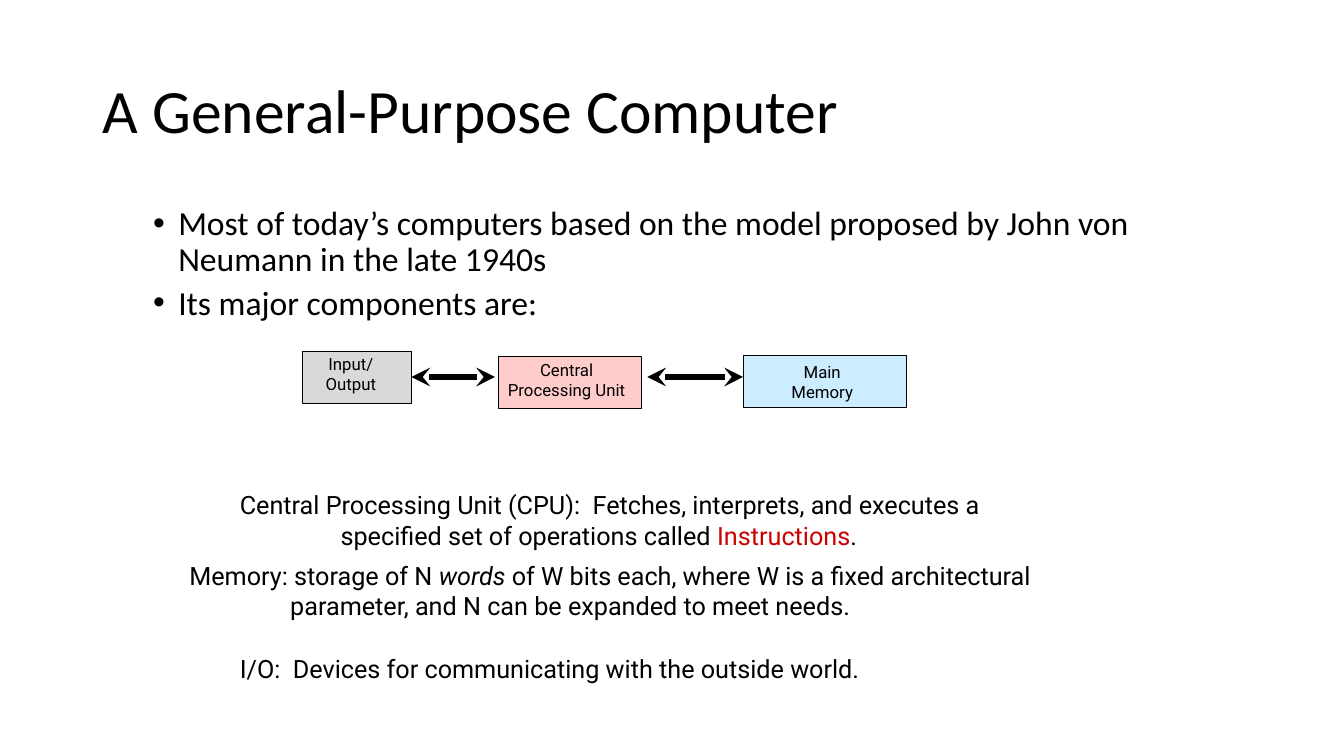
from lxml.etree import SubElement
from pptx import Presentation
from pptx.dml.color import RGBColor
from pptx.enum.shapes import MSO_CONNECTOR, MSO_SHAPE
from pptx.enum.text import MSO_ANCHOR, PP_ALIGN
from pptx.oxml.ns import qn
from pptx.util import Inches, Pt

BLACK = RGBColor(0x00, 0x00, 0x00)
RED = RGBColor(0xCC, 0x00, 0x00)
PINK = RGBColor(0xFF, 0xCC, 0xCC)
BLUE = RGBColor(0xCC, 0xEC, 0xFF)
GRAY = RGBColor(0xD9, 0xD9, 0xD9)

TITLE = "A General-Purpose Computer"
BULLETS = [
    "Most of today’s computers based on the model proposed by John von Neumann in the late 1940s",
    "Its major components are:",
]
UNIT_HEIGHT = 0.51
UNITS = [
    (["Input/", "Output"], GRAY, (3, 3.49, 1.08), (3.12, 3.46, 0.72), False),
    (["Central", "Processing Unit"], PINK, (4.94, 3.54, 1.42), (4.91, 3.52, 1.42), True),
    (["Main", "Memory"], BLUE, (7.37, 3.53, 1.62), (7.7, 3.54, 0.91), False),
]
ARROW_Y = 3.74
ARROWS = [(4.08, 4.91), (6.42, 7.37)]
NOTES_RIGHT = 10.7
NOTES = [
    (2.28, 4.81, 0.71, [
        ("Central Processing Unit (CPU):  Fetches, interprets, and executes a specified set "
         "of operations called ", BLACK, False),
        ("Instructions", RED, False),
        (".", BLACK, False),
    ]),
    (1.78, 5.51, 1, [
        ("Memory: storage of N ", BLACK, False),
        ("words", BLACK, True),
        (" of W bits each, where W is a fixed architectural parameter, and N can be "
         "expanded to meet needs.", BLACK, False),
    ]),
    (2.28, 6.43, 0.4, [
        ("I/O:  Devices for communicating with the outside world.", BLACK, False),
    ]),
]


def style(para, name, size):
    para.font.name = name
    para.font.size = Pt(size)
    para.font.color.rgb = BLACK


def indent(para, margin, first):
    props = para._p.get_or_add_pPr()
    props.set("marL", str(Inches(margin)))
    props.set("indent", str(Inches(first)))
    return props


def add_text(slide, left, top, width, height, wrap=True):
    box = slide.shapes.add_textbox(*map(Inches, (left, top, width, height)))
    box.text_frame.word_wrap = wrap
    return box.text_frame


def add_lines(frame, lines, name, size):
    frame.text = "\n".join(lines)
    for para in frame.paragraphs:
        style(para, name, size)
    return frame.paragraphs


def add_title(slide):
    title = slide.shapes.title
    title.left, title.top, title.width, title.height = map(Inches, (0.92, 0.4, 11.5, 1.45))
    title.text_frame.vertical_anchor = MSO_ANCHOR.MIDDLE
    for para in add_lines(title.text_frame, [TITLE], "Calibri", 44):
        para.alignment = PP_ALIGN.LEFT
        para.line_spacing = 0.9


def add_bullets(slide):
    frame = add_text(slide, 0.92, 2, 11.5, 4.76)
    for para in add_lines(frame, BULLETS, "Calibri", 24):
        para.line_spacing = 0.9
        para.space_before = Pt(5)
        props = indent(para, 0.75, -0.25)
        bullet_font = props.makeelement(qn("a:buFont"), {"typeface": "Arial"})
        bullet = props.makeelement(qn("a:buChar"), {"char": "•"})
        position = props.index(props.find(qn("a:defRPr")))
        props[position:position] = [bullet_font, bullet]


def add_unit(slide, lines, color, block_at, label_at, wrap):
    block = slide.shapes.add_shape(MSO_SHAPE.RECTANGLE, *map(Inches, (*block_at, UNIT_HEIGHT)))
    block.shadow.inherit = False
    block.fill.solid()
    block.fill.fore_color.rgb = color
    block.line.color.rgb = BLACK
    block.line.width = Pt(0.75)
    label = add_text(slide, *label_at, UNIT_HEIGHT, wrap)
    for para in add_lines(label, lines, "Roboto", 12):
        para.alignment = PP_ALIGN.CENTER


def add_arrow(slide, start, end):
    ends = map(Inches, (start, ARROW_Y, end, ARROW_Y))
    arrow = slide.shapes.add_connector(MSO_CONNECTOR.STRAIGHT, *ends)
    arrow.line.color.rgb = BLACK
    arrow.line.width = Pt(4.5)
    for tip in ("a:headEnd", "a:tailEnd"):
        SubElement(arrow.line._get_or_add_ln(), qn(tip), type="stealth")
    SubElement(arrow._element.spPr, qn("a:effectLst"))


def add_note(slide, left, top, height, spans):
    frame = add_text(slide, left, top, NOTES_RIGHT - left, height)
    para = frame.paragraphs[0]
    style(para, "Roboto", 18)
    indent(para, 1, -1)
    for text, color, italic in spans:
        span = para.add_run()
        span.text = text
        span.font.color.rgb = color
        span.font.italic = italic


def main():
    deck = Presentation()
    deck.slide_width, deck.slide_height = Inches(13.33), Inches(7.5)
    slide = deck.slides.add_slide(deck.slide_layouts[5])
    add_title(slide)
    add_bullets(slide)
    for unit in UNITS:
        add_unit(slide, *unit)
    for arrow in ARROWS:
        add_arrow(slide, *arrow)
    for note in NOTES:
        add_note(slide, *note)
    deck.save("out.pptx")


if __name__ == "__main__":
    main()
